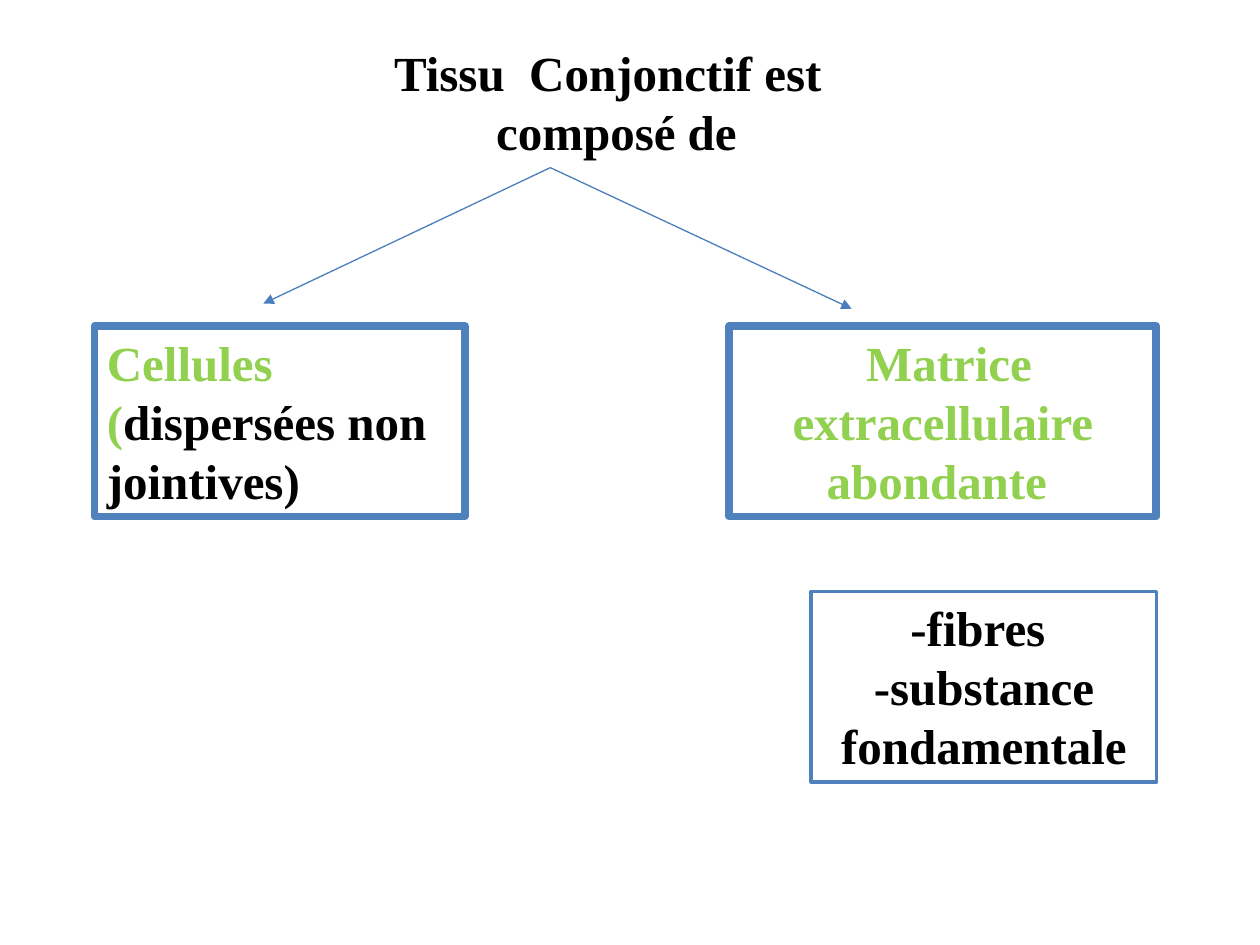
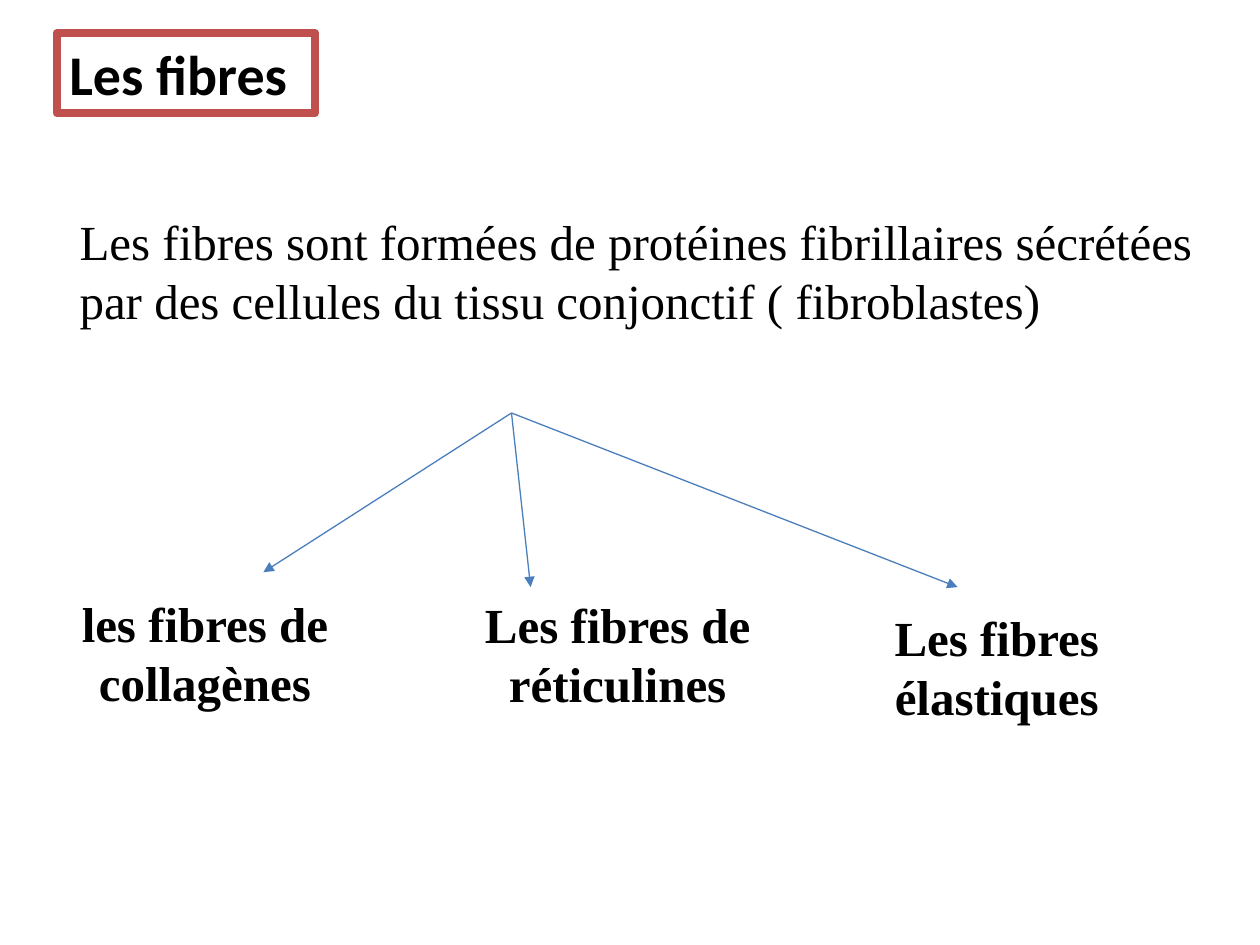
import pptx
import pptx.util
import pptx.dml.color
import pptx.enum.shapes
import pptx.enum.text
import pptx.oxml
import pptx.oxml.ns

Pt = pptx.util.Pt
LEFT = pptx.enum.text.PP_ALIGN.LEFT
CENTER = pptx.enum.text.PP_ALIGN.CENTER

BLACK, GREEN, WHITE = "000000", "92D050", "FFFFFF"
BLUE, RED, ARROW = "4F81BD", "C0504D", "4B7EBC"
SERIF, SANS = "Times New Roman", "Calibri"

SLIDES = [
    {
        "title": dict(
            at=(218, 20.8, 268.5, 75),
            paragraphs=[(LEFT, [("Tissu  Conjonctif est", BLACK)]),
                        (CENTER, [("composé de", BLACK)])]),
        "parts": [
            dict(at=(54, 186.4, 211.5, 108.8), outline=(BLUE, 4.5),
                 paragraphs=[(LEFT, [("Cellules (", GREEN),
                                     ("dispersées non jointives)", BLACK)])]),
            dict(at=(416.8, 186.4, 244, 108.8), outline=(BLUE, 4.5),
                 paragraphs=[(CENTER, [(" ", BLACK),
                                       ("Matrice extracellulaire abondante ", GREEN)])]),
            dict(at=(463.5, 338, 197.5, 108.8), outline=(BLUE, 2),
                 paragraphs=[(CENTER, [("-fibres ", BLACK)]),
                             (CENTER, [("-substance fondamentale", BLACK)])]),
        ],
        "branch_start": (314.5, 95.8),
        "branch_ends": [(150.5, 173.5), (486.7, 176.4)],
    },
    {
        "title": dict(
            at=(32.4, 18.8, 147.6, 46), outline=(RED, 4.5),
            paragraphs=[(LEFT, [("Les fibres", BLACK)])],
            font=SANS, size=32),
        "parts": [
            dict(at=(38.4, 117.4, 681.6, 108.8), bold=False,
                 paragraphs=[(LEFT, [("Les fibres sont formées de protéines fibrillaires sécrétées "
                                      "par des cellules du tissu conjonctif ( fibroblastes)", BLACK)])]),
            dict(at=(27.4, 335.5, 179.4, 75),
                 paragraphs=[(CENTER, [("les fibres de collagènes", BLACK)])]),
            dict(at=(262.2, 336.2, 181.5, 108.8),
                 paragraphs=[(CENTER, [("Les fibres de réticulines", BLACK)])]),
            dict(at=(490.4, 343.5, 158.4, 75),
                 paragraphs=[(CENTER, [("Les fibres élastiques", BLACK)])]),
        ],
        "branch_start": (292.3, 236),
        "branch_ends": [(150.5, 327), (303.2, 335.5), (547.2, 335.5)],
    },
]


def color(code):
    return pptx.dml.color.RGBColor.from_string(code)


def write(holder, paragraphs, font=SERIF, size=28, bold=True):
    frame = holder.text_frame
    frame.word_wrap = True
    frame.auto_size = pptx.enum.text.MSO_AUTO_SIZE.NONE
    frame.vertical_anchor = pptx.enum.text.MSO_ANCHOR.TOP
    for index, (alignment, runs) in enumerate(paragraphs):
        paragraph = frame.add_paragraph() if index else frame.paragraphs[0]
        paragraph.alignment = alignment
        for words, code in runs:
            run = paragraph.add_run()
            run.text = words
            run.font.name = font
            run.font.size = Pt(size)
            run.font.bold = bold
            run.font.color.rgb = color(code)


def place(slide, at, paragraphs, outline=None, holder=None, **style):
    box = [Pt(length) for length in at]
    if holder is not None:
        holder.left, holder.top, holder.width, holder.height = box
    elif outline:
        holder = slide.shapes.add_shape(pptx.enum.shapes.MSO_SHAPE.RECTANGLE, *box)
        holder.shadow.inherit = False
    else:
        holder = slide.shapes.add_textbox(*box)
    if outline:
        holder.fill.solid()
        holder.fill.fore_color.rgb = color(WHITE)
        holder.line.color.rgb = color(outline[0])
        holder.line.width = Pt(outline[1])
    write(holder, paragraphs, **style)


def add_arrow(slide, start, end):
    arrow = slide.shapes.add_connector(
        pptx.enum.shapes.MSO_CONNECTOR.STRAIGHT, *[Pt(length) for length in start + end])
    arrow.line.color.rgb = color(ARROW)
    arrow.line.width = Pt(0.75)
    tail = pptx.oxml.parse_xml(
        f'<a:tailEnd {pptx.oxml.ns.nsdecls("a")} type="triangle"/>')
    arrow.line._get_or_add_ln().append(tail)
    arrow._element.spPr.append(
        pptx.oxml.parse_xml(f'<a:effectLst {pptx.oxml.ns.nsdecls("a")}/>'))


def main():
    deck = pptx.Presentation()
    deck.slide_width, deck.slide_height = Pt(720), Pt(540)
    for content in SLIDES:
        slide = deck.slides.add_slide(deck.slide_layouts[5])
        place(slide, holder=slide.shapes.title, **content["title"])
        for part in content["parts"]:
            place(slide, **part)
        for end in content["branch_ends"]:
            add_arrow(slide, content["branch_start"], end)
    deck.save("out.pptx")


if __name__ == "__main__":
    main()
